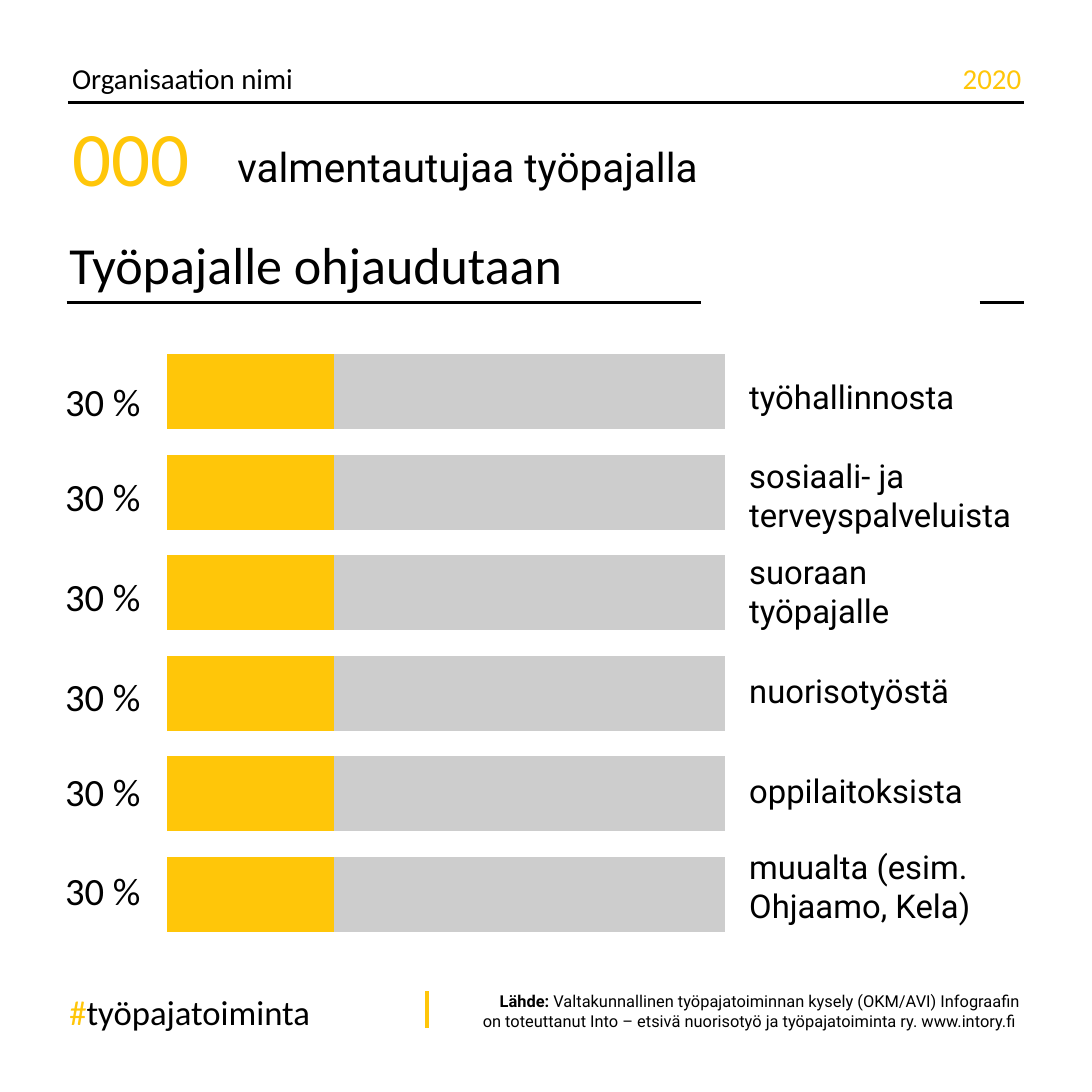
from lxml import etree
from pptx import Presentation, util as u
from pptx.chart import data
from pptx.dml import color
from pptx.enum import chart as ch, shapes, text
from pptx.oxml import ns

BLACK, YELLOW, GREY = "000000", "FFC609", "CDCDCD"
TOP, MIDDLE = text.MSO_ANCHOR.TOP, text.MSO_ANCHOR.MIDDLE
LEFT, RIGHT = text.PP_ALIGN.LEFT, text.PP_ALIGN.RIGHT

SHARES = [(2.57, 30), (3.26, 30), (3.98, 30), (4.7, 30), (5.38, 30), (6.1, 30)]
SOURCES = [
    (2.58, ["työhallinnosta"]),
    (3.29, ["sosiaali- ja", "terveyspalveluista"]),
    (3.98, ["suoraan", "työpajalle"]),
    (4.7, ["nuorisotyöstä"]),
    (5.42, ["oppilaitoksista"]),
    (6.11, ["muualta (esim.", "Ohjaamo, Kela)"]),
]


def rgb(value):
    return color.RGBColor.from_string(value)


def write(box, lines, insets=(0, 0, 0, 0), anchor=TOP, align=LEFT, spacing=None):
    frame = box.text_frame
    frame.word_wrap = True
    frame.auto_size = text.MSO_AUTO_SIZE.NONE
    frame.vertical_anchor = anchor
    frame.margin_left, frame.margin_top, frame.margin_right, frame.margin_bottom = map(u.Inches, insets)
    for number, spans in enumerate(lines):
        para = frame.add_paragraph() if number else frame.paragraphs[0]
        para.alignment = align
        para.space_before = u.Pt(0)
        if spacing:
            para.line_spacing = spacing
        for words, font, size, tone, bold in spans:
            span = para.add_run()
            span.text = words
            span.font.name = font
            span.font.size = u.Pt(size)
            span.font.bold = bold
            span.font.color.rgb = rgb(tone)


def add_text(page, place, lines, **layout):
    write(page.shapes.add_textbox(*map(u.Inches, place)), lines, **layout)


def add_field(page, place, words, size, tone=BLACK, **layout):
    add_text(page, place, [[(words, "Calibri", size, tone, False)]],
             spacing=u.Pt(24.8), **layout)


def add_title(page, place, words):
    title = page.shapes.title
    title.left, title.top, title.width, title.height = map(u.Inches, place)
    write(title, [[(words, "Calibri", 27, BLACK, False)]],
          insets=(0, 0.05, 0.12, 0.05), anchor=MIDDLE)


def add_rule(page, start, end, tone=BLACK, width=1.5):
    rule = page.shapes.add_connector(shapes.MSO_CONNECTOR.STRAIGHT,
                                     *map(u.Inches, start + end))
    rule.line.color.rgb = rgb(tone)
    rule.line.width = u.Pt(width)
    etree.SubElement(rule._element.spPr, ns.qn("a:effectLst"))


def add_share_chart(page, place):
    shares = [share for _, share in SHARES]
    table = data.CategoryChartData()
    table.categories = [str(number + 1) for number in range(len(shares))]
    table.add_series("Series 1", shares)
    table.add_series("Series 2", [100 - share for share in shares])
    chart = page.shapes.add_chart(ch.XL_CHART_TYPE.BAR_STACKED_100,
                                  *map(u.Inches, place), table).chart
    chart.has_legend = False
    chart.has_title = False
    chart.font.name = "Arial"
    chart.font.size = u.Pt(10)
    chart.font.color.rgb = rgb(BLACK)
    for axis in (chart.category_axis, chart.value_axis):
        axis.visible = False
        axis.has_major_gridlines = False
    plot = chart.plots[0]
    plot.gap_width = 34
    plot.overlap = 100
    plot.vary_by_categories = False
    for series, tone in zip(plot.series, (YELLOW, GREY)):
        series.format.fill.solid()
        series.format.fill.fore_color.rgb = rgb(tone)


def add_header(page):
    add_field(page, (0.5, 0.34, 4.27, 0.31), "Organisaation nimi", 15, insets=(0.02, 0, 0.04, 0.12))
    add_field(page, (6.37, 0.34, 0.99, 0.31), "2020", 15, YELLOW,
              insets=(0.02, 0, 0, 0.12), align=RIGHT)
    add_rule(page, (0.49, 0.74), (7.38, 0.74))
    add_field(page, (0.5, 0.99, 1.11, 0.41), "000", 40, YELLOW, insets=(0.02, 0.12, 0, 0.12))
    add_text(page, (1.67, 0.97, 3.82, 0.45),
             [[("valmentautujaa työpajalla", "Roboto", 21, BLACK, False)]],
             insets=(0.04, 0.05, 0.12, 0.05), anchor=MIDDLE)


def add_referrals(page):
    add_title(page, (0.5, 1.62, 6.86, 0.56), "Työpajalle ohjaudutaan")
    add_rule(page, (0.48, 2.18), (5.05, 2.18))
    add_rule(page, (7.06, 2.18), (7.38, 2.18))
    add_share_chart(page, (1.12, 2.37, 4.19, 4.53))
    for top, share in SHARES:
        add_field(page, (0.45, top, 0.88, 0.61), f"{share} %", 20, insets=(0.02, 0.14, 0, 0.31))
    for top, lines in SOURCES:
        add_text(page, (5.2, top, 2.3, 0.56),
                 [[(line, "Roboto", 17, BLACK, False)] for line in lines],
                 insets=(0.2, 0, 0, 0), anchor=MIDDLE, spacing=u.Pt(20))


def add_footer(page):
    add_text(page, (0.5, 7.07, 2.15, 0.4),
             [[("#", "Calibri", 18, YELLOW, False),
               ("työpajatoiminta", "Calibri", 18, BLACK, False)]],
             insets=(0, 0.05, 0, 0.05), spacing=1.07)
    add_rule(page, (3.08, 7.41), (3.08, 7.14), YELLOW, 2)
    credit = (" Valtakunnallinen työpajatoiminnan kysely (OKM/AVI) Infograafin on toteuttanut "
              "Into – etsivä nuorisotyö ja työpajatoiminta ry. www.intory.fi ")
    add_text(page, (3.16, 7.14, 4.19, 0.29),
             [[("Lähde:", "Roboto", 8.5, BLACK, True), (credit, "Roboto", 8.5, BLACK, False)]],
             insets=(0.31, 0, 0, 0), anchor=MIDDLE, align=RIGHT)


def main():
    deck = Presentation()
    deck.slide_width = deck.slide_height = u.Inches(7.87)
    page = deck.slides.add_slide(deck.slide_layouts.get_by_name("Title Only"))
    add_header(page)
    add_referrals(page)
    add_footer(page)
    deck.save("out.pptx")


if __name__ == "__main__":
    main()
